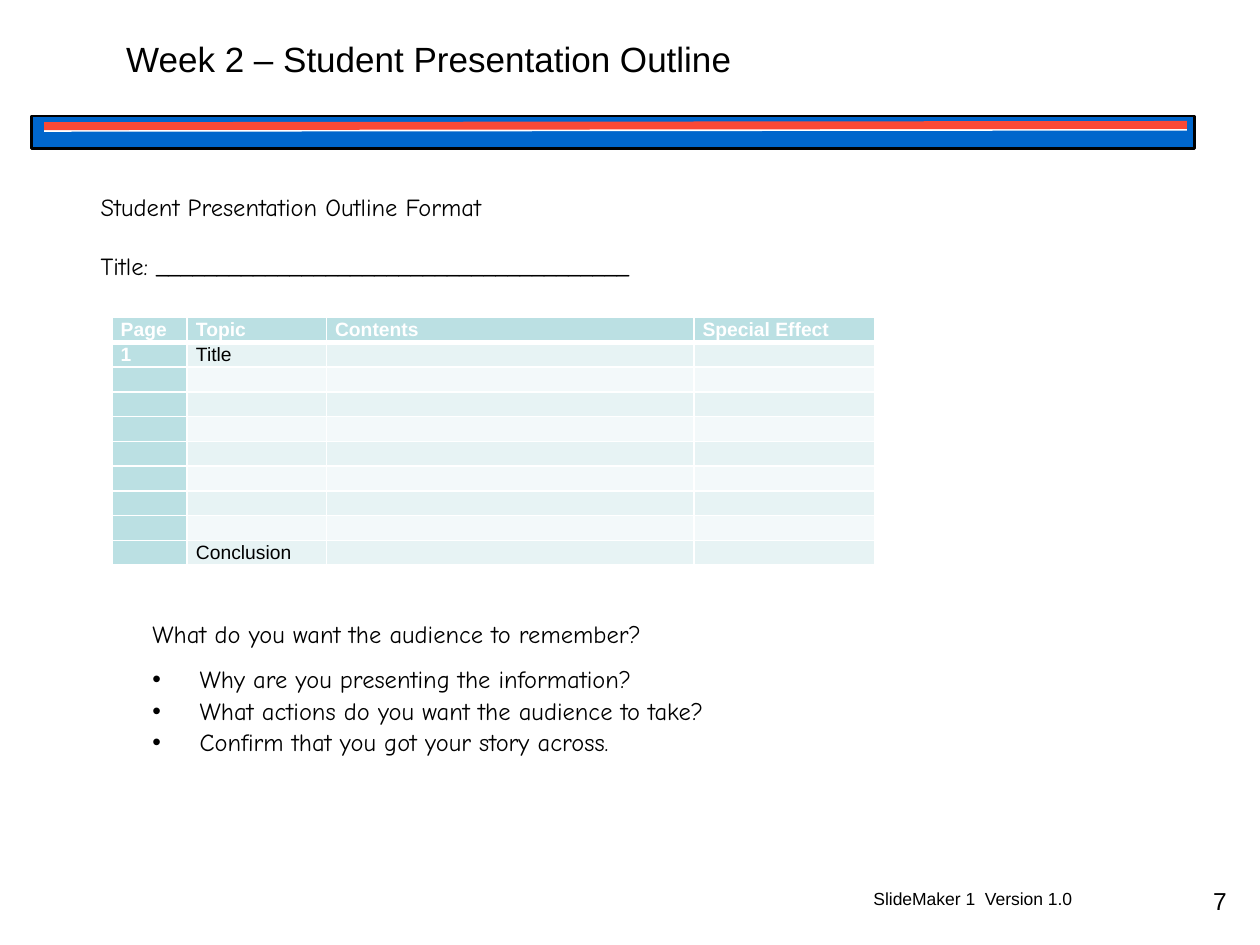
from lxml import etree
from pptx import Presentation
from pptx.dml.color import RGBColor
from pptx.enum.shapes import MSO_CONNECTOR, MSO_SHAPE
from pptx.enum.text import MSO_ANCHOR, PP_ALIGN
from pptx.oxml.ns import qn
from pptx.util import Pt

BLACK = RGBColor(0x00, 0x00, 0x00)
WHITE = RGBColor(0xFF, 0xFF, 0xFF)
BLUE = RGBColor(0x00, 0x66, 0xCC)
RED = RGBColor(0xFA, 0x49, 0x36)
HEADER_TEAL = RGBColor(0xBB, 0xE0, 0xE3)
BAND_DARK = RGBColor(0xE7, 0xF3, 0xF4)
BAND_LIGHT = RGBColor(0xF3, 0xF9, 0xFA)

HEADINGS = ["Page", "Topic", "Contents", "Special Effect"]
ROWS = [HEADINGS, ["1", "Title", "", ""]] + [[""] * 4] * 7 + [["", "Conclusion", "", ""]]
COL_WIDTHS = [43, 79.5, 210, 103.5]
QUESTIONS = [
    "Why are you presenting the information?",
    "What actions do you want the audience to take?",
    "Confirm that you got your story across.",
]


def set_attrs(obj, **values):
    """Set each named attribute on an object."""
    for name, value in values.items():
        setattr(obj, name, value)


def write_run(p, text, size, font="Arial", color=BLACK, bold=False):
    """Add one formatted run to a paragraph."""
    r = p.add_run()
    r.text = text
    set_attrs(r.font, size=Pt(size), name=font, bold=bold)
    r.font.color.rgb = color


def add_text(s, box, lines, size, font="Arial", anchor=MSO_ANCHOR.TOP):
    """Place a wrapped text box with one paragraph per (text, format, bulleted) line."""
    sp = s.shapes.add_textbox(*map(Pt, box))
    tf = sp.text_frame
    set_attrs(tf, word_wrap=True, vertical_anchor=anchor)
    for i, (text, fmt, bulleted) in enumerate(lines):
        p = tf.paragraphs[0] if i == 0 else tf.add_paragraph()
        if bulleted:
            add_bullet(p, 27)
        set_attrs(p, **fmt)
        write_run(p, text, size, font)


def add_bullet(p, indent):
    """Give a paragraph a round bullet with a hanging indent."""
    pPr = p._p.get_or_add_pPr()
    pPr.set("marL", str(Pt(indent)))
    pPr.set("indent", str(-Pt(indent)))
    etree.SubElement(pPr, qn("a:buFont")).set("typeface", "Arial")
    etree.SubElement(pPr, qn("a:buChar")).set("char", "•")


def add_stripe(s, start, end, color, width):
    """Draw one straight coloured stripe."""
    line = s.shapes.add_connector(MSO_CONNECTOR.STRAIGHT, *map(Pt, start + end))
    line.line.color.rgb = color
    line.line.width = Pt(width)
    etree.SubElement(line._element.spPr, qn("a:effectLst"))


def add_banner(s, x, y, w, h):
    """Draw the blue bar with its white and red stripes."""
    bar = s.shapes.add_shape(MSO_SHAPE.RECTANGLE, Pt(x), Pt(y), Pt(w), Pt(h))
    bar.shadow.inherit = False
    bar.fill.solid()
    bar.fill.fore_color.rgb = BLUE
    bar.line.color.rgb = BLACK
    bar.line.width = Pt(1.5)
    for drop, color, width in [(7.9, WHITE, 2.25), (5.8, RED, 4.5)]:
        add_stripe(s, (x + 7.2, y + drop), (x + w - 4.3, y + drop - 0.7), color, width)


def set_borders(cell, bottom):
    """Give a cell white borders, with its own bottom width."""
    tcPr = cell._tc.get_or_add_tcPr()
    for i, (side, width) in enumerate([("L", 1), ("R", 1), ("T", 1), ("B", bottom)]):
        ln = etree.Element(qn(f"a:ln{side}"), w=str(Pt(width)))
        fill = etree.SubElement(ln, qn("a:solidFill"))
        etree.SubElement(fill, qn("a:srgbClr")).set("val", str(WHITE))
        tcPr.insert(i, ln)


def fill_cell(cell, text, row, col):
    """Format one table cell by its place in the grid."""
    heading = row == 0 or col == 0
    set_attrs(cell, margin_left=Pt(5), margin_right=Pt(5), margin_top=0, margin_bottom=0)
    cell.fill.solid()
    cell.fill.fore_color.rgb = HEADER_TEAL if heading else BAND_DARK if row % 2 else BAND_LIGHT
    set_borders(cell, 3 if row <= 1 and row == 0 else 1)
    p = cell.text_frame.paragraphs[0]
    p.line_spacing = 1.07
    if text:
        write_run(p, text, 11, color=WHITE if heading else BLACK, bold=heading)
    else:
        etree.SubElement(p._p, qn("a:endParaRPr")).set("sz", "1100")


def add_outline_table(s, x, y, w, h):
    """Place the outline table with equal rows."""
    shape = s.shapes.add_table(len(ROWS), len(HEADINGS), Pt(x), Pt(y), Pt(w), Pt(h))
    table = shape.table
    for column, width in zip(table.columns, COL_WIDTHS):
        column.width = Pt(width)
    for i, texts in enumerate(ROWS):
        table.rows[i].height = Pt(h / len(ROWS))
        for j, text in enumerate(texts):
            fill_cell(table.cell(i, j), text, i, j)


def add_format_heading(s, box):
    """Place the format heading and the title blank."""
    lines = [
        ("Student Presentation Outline Format", {"space_after": Pt(17)}, False),
        ("Title: " + "_" * 39, {}, False),
    ]
    add_text(s, box, lines, 14, "Comic Neue", MSO_ANCHOR.MIDDLE)


def add_questions(s, box):
    """Place the closing question and its bullets."""
    lead = {"line_spacing": 1.07, "space_after": Pt(8)}
    lines = [("What do you want the audience to remember?", lead, False)]
    lines += [(text, {"line_spacing": 1.07}, True) for text in QUESTIONS]
    add_text(s, box, lines, 14, "Comic Neue")


def add_footer(s, x, y, w, h):
    """Place the version text and the slide number."""
    add_text(s, (x, y, 192, 20), [("SlideMaker 1  Version 1.0", {}, False)], 10)
    number = ("7", {"alignment": PP_ALIGN.RIGHT}, False)
    add_text(s, (x + w - 168, y - 1.4, 168, h), [number], 14)


def main():
    """Build the slide and save it."""
    prs = Presentation()
    set_attrs(prs, slide_width=Pt(720), slide_height=Pt(540))
    s = prs.slides.add_slide(prs.slide_layouts[6])
    add_banner(s, 18, 66.3, 664.5, 18.7)
    add_footer(s, 492, 504, 216, 37.4)
    add_text(s, (65, 18, 462, 31.7), [("Week 2 – Student Presentation Outline", {}, False)], 20)
    add_outline_table(s, 64, 181.5, sum(COL_WIDTHS), 141.5)
    add_format_heading(s, (50.4, 106, 511, 58))
    add_questions(s, (80, 349, 403, 88))
    prs.save("out.pptx")


if __name__ == "__main__":
    main()
